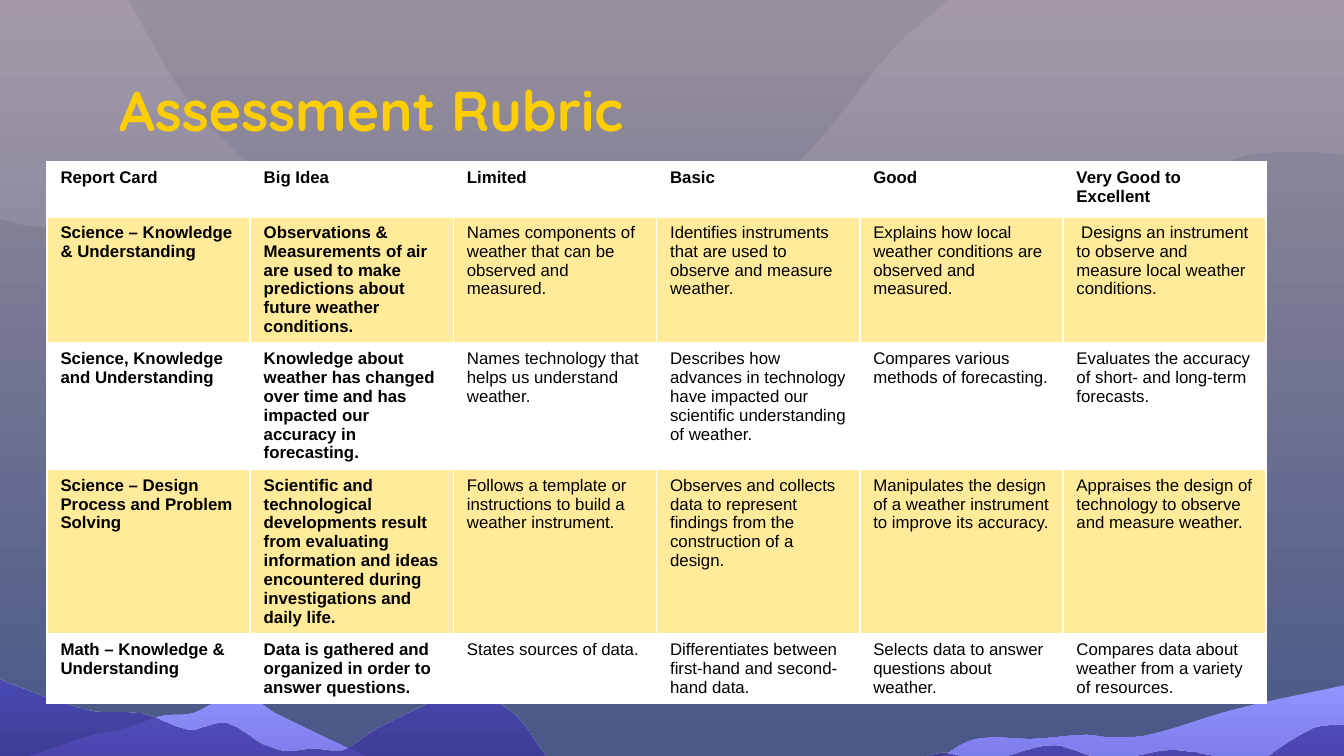
import math
from dataclasses import dataclass

import pptx
import pptx.dml.color
import pptx.enum.text
import pptx.oxml
import pptx.oxml.ns
import pptx.util
from pptx.util import Cm


@dataclass(frozen=True)
class Theme:
    title_font: str = "Quicksand"
    body_font: str = "Arial"
    title_size: int = 30
    body_size: int = 9
    title: str = "FFCE00"
    text: str = "000000"
    white: str = "FFFFFF"
    band: str = "FFEB99"
    cloud: str = "FDF0F7"
    sky: tuple = ("99909D", "495887")
    far_hills: tuple = ("9393FF", "4846BB")
    near_hills: tuple = ("4846BB", "281B66")


# Outlines in inches: each is a chain of smooth curves joined by straight lines
CLOUD_RIGHT = [
    [(10, 1.15), (9.7, 1.13), (9.23, 1.17), (8.11, 1.61), (7.09, 2.28), (5.85, 2.82),
     (5, 2.92), (4.49, 2.88), (3.21, 2.4)],
    [(3.41, 2.37), (3.81, 2.48), (4.46, 2.14)],
    [(4.46, 2.14), (5.44, 1.67), (6.07, 1.07), (6.65, 0.36), (7.06, 0)],
    [(10, 0)],
]
CLOUD_OVERLAP = [
    [(4.46, 2.14), (3.81, 2.48), (3.41, 2.37)],
    [(3.41, 2.37), (4.46, 2.14)],
]
CLOUD_LEFT = [
    [(0.94, -0.02), (1.47, 0.84), (2.51, 1.79)],
    [(2.51, 1.79), (1.94, 1.83), (1.66, 1.83), (0.22, 1.68), (0, 1.63)],
    [(0, -0.02)],
]
FAR_HILLS = [
    [(10, 5.1), (9.19, 5.28), (8.55, 5.47), (8.27, 5.49), (8.08, 5.47), (7.68, 5.5),
     (7.38, 5.49), (7.2, 5.52), (6.92, 5.68), (6.6, 5.74), (6.34, 5.7), (6.1, 5.73),
     (5.61, 5.68), (5.4, 5.77), (4.89, 5.9), (4.32, 6.08), (3.93, 6.01), (3.11, 5.79),
     (2.07, 5.32), (1.82, 5.17), (1.62, 5.22), (1.43, 5.31), (1.2, 5.33), (0.95, 5.42),
     (0.7, 5.47), (0.17, 5.64), (-0.32, 5.72), (-0.67, 5.74)],
    [(-0.67, 6.84)],
    [(10, 6.84)],
]
NEAR_HILLS = [
    [(0, 5.06), (0.63, 5.28), (1.06, 5.31), (1.4, 5.43), (1.64, 5.38), (1.74, 5.4),
     (1.94, 5.53), (2.13, 5.59), (2.31, 5.57), (2.55, 5.58), (2.67, 5.51), (2.8, 5.42),
     (3.31, 5.18), (3.42, 5.15), (3.59, 5.17), (3.84, 5.33), (4.13, 5.68), (4.71, 5.83),
     (5.06, 5.8), (5.78, 5.71), (5.95, 5.68), (6.12, 5.72), (6.36, 5.77), (6.57, 5.78),
     (6.76, 5.68), (7, 5.6), (7.15, 5.63), (7.35, 5.68), (7.49, 5.63), (7.71, 5.56),
     (7.89, 5.55), (8.29, 5.68), (8.47, 5.62), (8.75, 5.58), (9.34, 5.69)],
    [(9.35, 5.68), (9.76, 5.42), (10.01, 5.39)],
    [(10.01, 6.53)],
    [(0, 6.53)],
]

RUBRIC = [
    ["Report Card", "Big Idea", "Limited", "Basic", "Good", "Very Good to Excellent"],
    ["Science – Knowledge & Understanding",
     "Observations & Measurements of air are used to make predictions about future weather conditions.",
     "Names components of weather that can be observed and measured.",
     "Identifies instruments that are used to observe and measure weather.",
     "Explains how local weather conditions are observed and measured.",
     " Designs an instrument to observe and measure local weather conditions."],
    ["Science, Knowledge and Understanding",
     "Knowledge about weather has changed over time and has impacted our accuracy in forecasting.",
     "Names technology that helps us understand weather.",
     "Describes how advances in technology have impacted our scientific understanding of weather.",
     "Compares various methods of forecasting.",
     "Evaluates the accuracy of short- and long-term forecasts."],
    ["Science – Design Process and Problem Solving",
     "Scientific and technological developments result from evaluating information and ideas "
     "encountered during investigations and daily life.",
     "Follows a template or instructions to build a weather instrument.",
     "Observes and collects data to represent findings from the construction of a design.",
     "Manipulates the design of a weather instrument to improve its accuracy.",
     "Appraises the design of technology to observe and measure weather."],
    ["Math – Knowledge & Understanding",
     "Data is gathered and organized in order to answer questions.",
     "States sources of data.",
     "Differentiates between first-hand and second-hand data.",
     "Selects data to answer questions about weather.",
     "Compares data about weather from a variety of resources."],
]


def control_point(before, point, after, toward):
    """Return the Bezier handle of point, a third of the way toward a neighbour."""
    share = math.dist(point, toward) / (math.dist(before, point) + math.dist(point, after))
    sign = 1 if toward == after else -1
    return tuple(p + sign * (a - b) * share / 3 for b, p, a in zip(before, point, after))


def curve_segments(points):
    """Return (handle, handle, end) for each piece of a smooth curve."""
    padded = [points[0], *points, points[-1]]
    return [(control_point(a, b, c, c), control_point(b, c, d, b), c)
            for a, b, c, d in zip(padded, padded[1:], padded[2:], padded[3:])]


class SlideBuilder:
    def __init__(self, slide, theme):
        self.slide = slide
        self.theme = theme

    def color(self, value):
        return pptx.dml.color.RGBColor.from_string(value)

    def gradient(self, fill, colors):
        fill.gradient()
        fill.gradient_angle = 270
        for stop, value in zip(fill.gradient_stops, colors):
            stop.color.rgb = self.color(value)

    def outline(self, curves, colors, opacities=()):
        """Draw scenery on the layout, behind the slide's own content."""
        curves = [[(x * Cm(2.54), y * Cm(2.54)) for x, y in curve] for curve in curves]
        start = end = curves[0][0]
        segments = []
        for curve in curves:
            segments += [(curve[0],)] if curve[0] != end else []
            segments += curve_segments(curve)
            end = curve[-1]
        builder = self.slide.shapes.build_freeform(*start)
        builder.add_line_segments([segment[-1] for segment in segments], close=True)
        shape = builder.convert_to_shape()
        lines = list(shape.element.spPr.iter(pptx.oxml.ns.qn("a:lnTo")))
        for line, segment in zip(lines, segments):
            if len(segment) == 3:
                points = "".join(f'<a:pt x="{round(x - shape.left)}" y="{round(y - shape.top)}"/>'
                                 for x, y in segment)
                line.getparent().replace(line, pptx.oxml.parse_xml(
                    f'<a:cubicBezTo {pptx.oxml.ns.nsdecls("a")}>{points}</a:cubicBezTo>'))
        shape.shadow.inherit = False
        shape.line.fill.background()
        if len(colors) == 1:
            shape.fill.solid()
            shape.fill.fore_color.rgb = self.color(colors[0])
        else:
            self.gradient(shape.fill, colors)
        for fill_color, opacity in zip(
                list(shape.element.spPr.iter(pptx.oxml.ns.qn("a:srgbClr"))), opacities):
            fill_color.append(pptx.oxml.parse_xml(
                f'<a:alpha {pptx.oxml.ns.nsdecls("a")} val="{opacity * 1000}"/>'))
        self.slide.slide_layout.shapes.element.append(shape.element)

    def style(self, paragraph, font_name, size, color, bold):
        font = paragraph.font
        font.name, font.size, font.bold = font_name, pptx.util.Pt(size), bold
        font.color.rgb = self.color(color)

    def title(self, text, left, top, width, height):
        shape = self.slide.shapes.title
        shape.left, shape.top, shape.width, shape.height = left, top, width, height
        frame = shape.text_frame
        frame.text = text
        frame.word_wrap = True
        frame.auto_size = pptx.enum.text.MSO_AUTO_SIZE.NONE
        frame.vertical_anchor = pptx.enum.text.MSO_ANCHOR.TOP
        frame.margin_left = frame.margin_right = frame.margin_top = frame.margin_bottom = Cm(0.25)
        paragraph = frame.paragraphs[0]
        paragraph.alignment = pptx.enum.text.PP_ALIGN.LEFT
        self.style(paragraph, self.theme.title_font, self.theme.title_size, self.theme.title, True)

    def borders(self, cell, bottom_width):
        properties = cell._tc.get_or_add_tcPr()
        for position, (side, width) in enumerate(zip("LRTB", (1, 1, 1, bottom_width))):
            properties.insert(position, pptx.oxml.parse_xml(
                f'<a:ln{side} {pptx.oxml.ns.nsdecls("a")} w="{pptx.util.Pt(width)}"><a:solidFill>'
                f'<a:srgbClr val="{self.theme.white}"/></a:solidFill></a:ln{side}>'))

    def table(self, rows, left, top, width, row_height):
        table = self.slide.shapes.add_table(
            len(rows), len(rows[0]), left, top, width, row_height * len(rows)).table
        table.horz_banding = False
        for r, row in enumerate(rows):
            for c, text in enumerate(row):
                cell = table.cell(r, c)
                cell.text = text
                cell.fill.solid()
                cell.fill.fore_color.rgb = self.color(self.theme.band if r % 2 else self.theme.white)
                self.style(cell.text_frame.paragraphs[0], self.theme.body_font,
                           self.theme.body_size, self.theme.text, r == 0 or c < 2)
                self.borders(cell, bottom_width=1 if r else 2)


def main():
    presentation = pptx.Presentation()
    presentation.slide_width, presentation.slide_height = Cm(25.4), Cm(14.29)
    theme = Theme()
    builder = SlideBuilder(presentation.slides.add_slide(presentation.slide_layouts[5]), theme)
    # Sky, clouds and hills
    builder.gradient(builder.slide.background.fill, theme.sky)
    for cloud in (CLOUD_RIGHT, CLOUD_OVERLAP, CLOUD_LEFT):
        builder.outline(cloud, [theme.cloud], [10])
    builder.outline(FAR_HILLS, theme.far_hills)
    builder.outline(NEAR_HILLS, theme.near_hills, [84, 63])
    # Title and rubric; rows grow to fit their text
    builder.title("Assessment Rubric", Cm(2), Cm(1.17), Cm(21.4), Cm(1.6))
    builder.table(RUBRIC, Cm(0.89), Cm(3.05), Cm(23.04), Cm(1.04))
    presentation.save("out.pptx")


if __name__ == "__main__":
    main()
